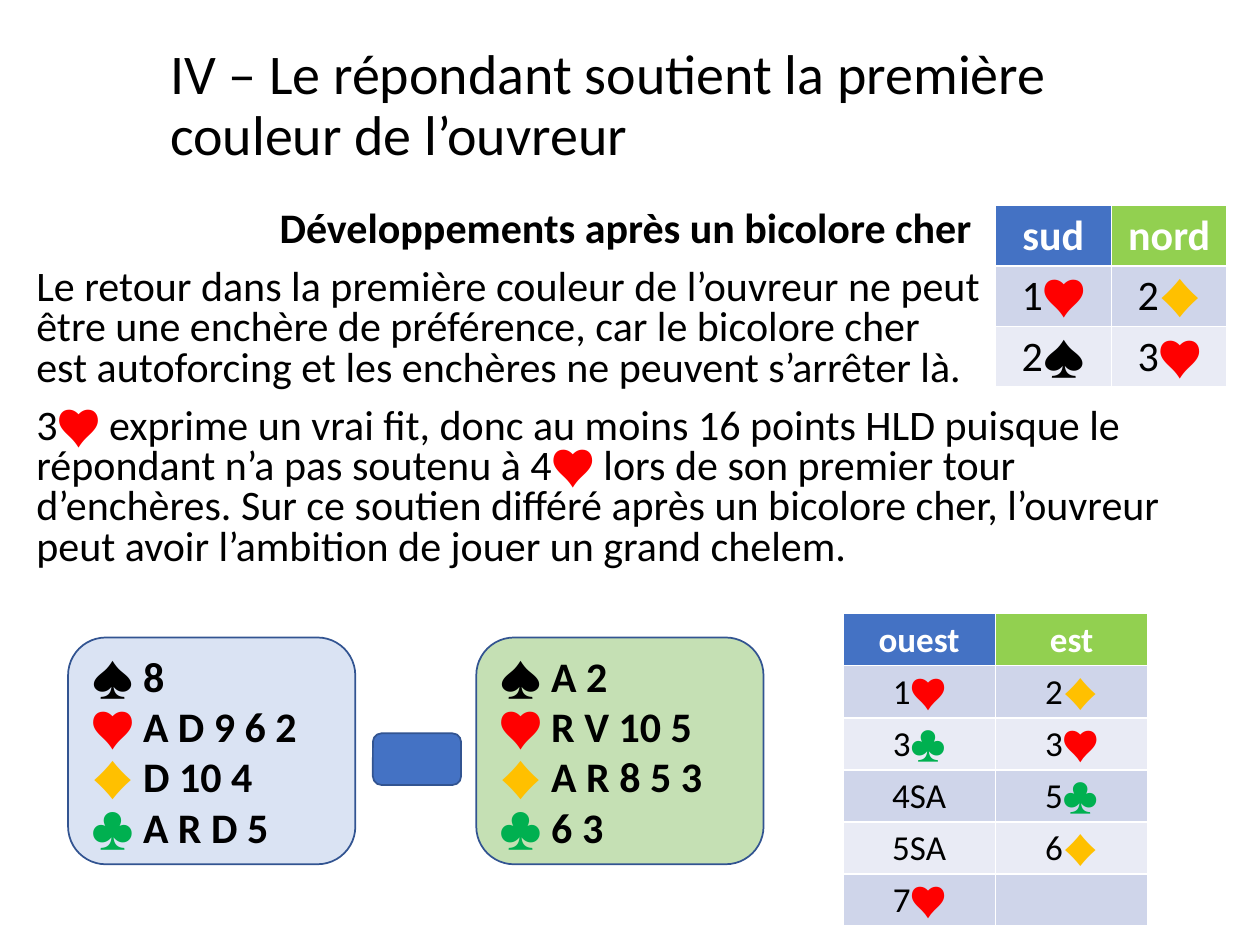
from itertools import groupby

from pptx import Presentation
from pptx import util as u
from pptx.dml import color
from pptx.enum import shapes, text

SUITS = {"♠": "000000", "♥": "FF0000", "♦": "FFC000", "♣": "00B050"}
BLUE, GREEN, OUTLINE = "4472C4", "92D050", "325491"
BANDS = ("CFD5EA", "E9EBF5")
CENTER, LEFT = text.PP_ALIGN.CENTER, text.PP_ALIGN.LEFT


def rgb(value):
    return color.RGBColor.from_string(value)


def apply(target, values):
    for name, value in values.items():
        setattr(target, name, value)


def inches(*lengths):
    return [u.Inches(length) for length in lengths]


class BridgeSlide:
    font = "Calibri"
    cell_margins = {
        "margin_left": u.Inches(0.07),
        "margin_right": u.Inches(0.07),
        "margin_top": u.Inches(0.04),
        "margin_bottom": u.Inches(0.04),
    }

    def __init__(self, deck):
        self.page = deck.slides.add_slide(deck.slide_layouts[5])

    def add_span(self, para, words, size, bold, ink):
        span = para.add_run()
        span.text = words
        apply(span.font, {"name": self.font, "size": u.Pt(size), "bold": bold})
        span.font.color.rgb = rgb(ink)

    def fill_para(self, para, words, size, bold=False, ink="000000", **layout):
        apply(para, layout)
        for index, line in enumerate(words.split("\n")):
            if index:
                para.add_line_break()
            for suit, letters in groupby(line, SUITS.get):
                self.add_span(para, "".join(letters), size, bold and not suit, suit or ink)

    def title(self, words, *place):
        box = self.page.shapes.title
        apply(box, dict(zip(("left", "top", "width", "height"), inches(*place))))
        apply(box.text_frame, {"word_wrap": True, "vertical_anchor": text.MSO_ANCHOR.BOTTOM,
                               "auto_size": text.MSO_AUTO_SIZE.NONE})
        self.fill_para(box.text_frame.paragraphs[0], words, 32, alignment=LEFT, line_spacing=0.9)

    def body(self, heading, paragraphs, *place):
        box = self.page.shapes.add_textbox(*inches(*place))
        box.text_frame.word_wrap = True
        spacing = {"line_spacing": 0.8, "space_before": u.Pt(10)}
        self.fill_para(box.text_frame.paragraphs[0], heading, 24, True, alignment=CENTER, **spacing)
        for words in paragraphs:
            self.fill_para(box.text_frame.add_paragraph(), words, 24, alignment=LEFT, **spacing)

    def card(self, fill, *place, lines=()):
        box = self.page.shapes.add_shape(shapes.MSO_SHAPE.ROUNDED_RECTANGLE, *inches(*place))
        box.shadow.inherit = False
        box.fill.solid()
        box.fill.fore_color.rgb = rgb(fill)
        box.line.color.rgb = rgb(OUTLINE)
        box.line.width = u.Pt(1)
        frame = box.text_frame
        apply(frame, {"word_wrap": True, "vertical_anchor": text.MSO_ANCHOR.MIDDLE})
        for index, words in enumerate(lines):
            para = frame.add_paragraph() if index else frame.paragraphs[0]
            self.fill_para(para, words, 24, True, alignment=LEFT)

    def bidding(self, rows, size, *place):
        table = self.page.shapes.add_table(len(rows), len(rows[0]), *inches(*place)).table
        for r, row in enumerate(rows):
            for c, words in enumerate(row):
                cell = table.cell(r, c)
                apply(cell, self.cell_margins)
                cell.fill.solid()
                fill = BANDS[(r - 1) % 2] if r else (BLUE, GREEN)[c]
                cell.fill.fore_color.rgb = rgb(fill)
                if words:
                    self.fill_para(cell.text_frame.paragraphs[0], words, size, bold=r == 0,
                                   ink="000000" if r else "FFFFFF", alignment=CENTER)


def main():
    deck = Presentation()
    apply(deck, {"slide_width": u.Inches(10), "slide_height": u.Inches(7.5)})
    slide = BridgeSlide(deck)
    slide.title("IV – Le répondant soutient la première couleur de l’ouvreur", 1.25, 0.18, 7.5, 1.2)
    slide.body(
        "Développements après un bicolore cher",
        [
            "Le retour dans la première couleur de l’ouvreur ne peut\n"
            "être une enchère de préférence, car le bicolore cher\n"
            "est autoforcing et les enchères ne peuvent s’arrêter là.",
            "3♥ exprime un vrai fit, donc au moins 16 points HLD puisque le répondant "
            "n’a pas soutenu à 4♥ lors de son premier tour d’enchères. Sur ce soutien "
            "différé après un bicolore cher, l’ouvreur peut avoir l’ambition de jouer "
            "un grand chelem.",
        ],
        0.19, 1.63, 9.55, 3.1,
    )
    slide.bidding(
        [("ouest", "est"), ("1♥", "2♦"), ("3♣", "3♥"), ("4SA", "5♣"), ("5SA", "6♦"), ("7♥", "")],
        20, 6.69, 4.87, 2.42, 2.45,
    )
    slide.card("DAE3F3", 0.54, 5.06, 2.28, 1.8,
               lines=("♠ 8", "♥ A D 9 6 2", "♦ D 10 4", "♣ A R D 5"))
    slide.card(BLUE, 2.96, 5.82, 0.7, 0.41)
    slide.card("C5E0B4", 3.78, 5.06, 2.28, 1.8,
               lines=("♠ A 2", "♥ R V 10 5", "♦ A R 8 5 3", "♣ 6 3"))
    slide.bidding([("sud", "nord"), ("1♥", "2♦"), ("2♠", "3♥")], 24, 7.9, 1.63, 1.84, 1.43)
    deck.save("out.pptx")


if __name__ == "__main__":
    main()
